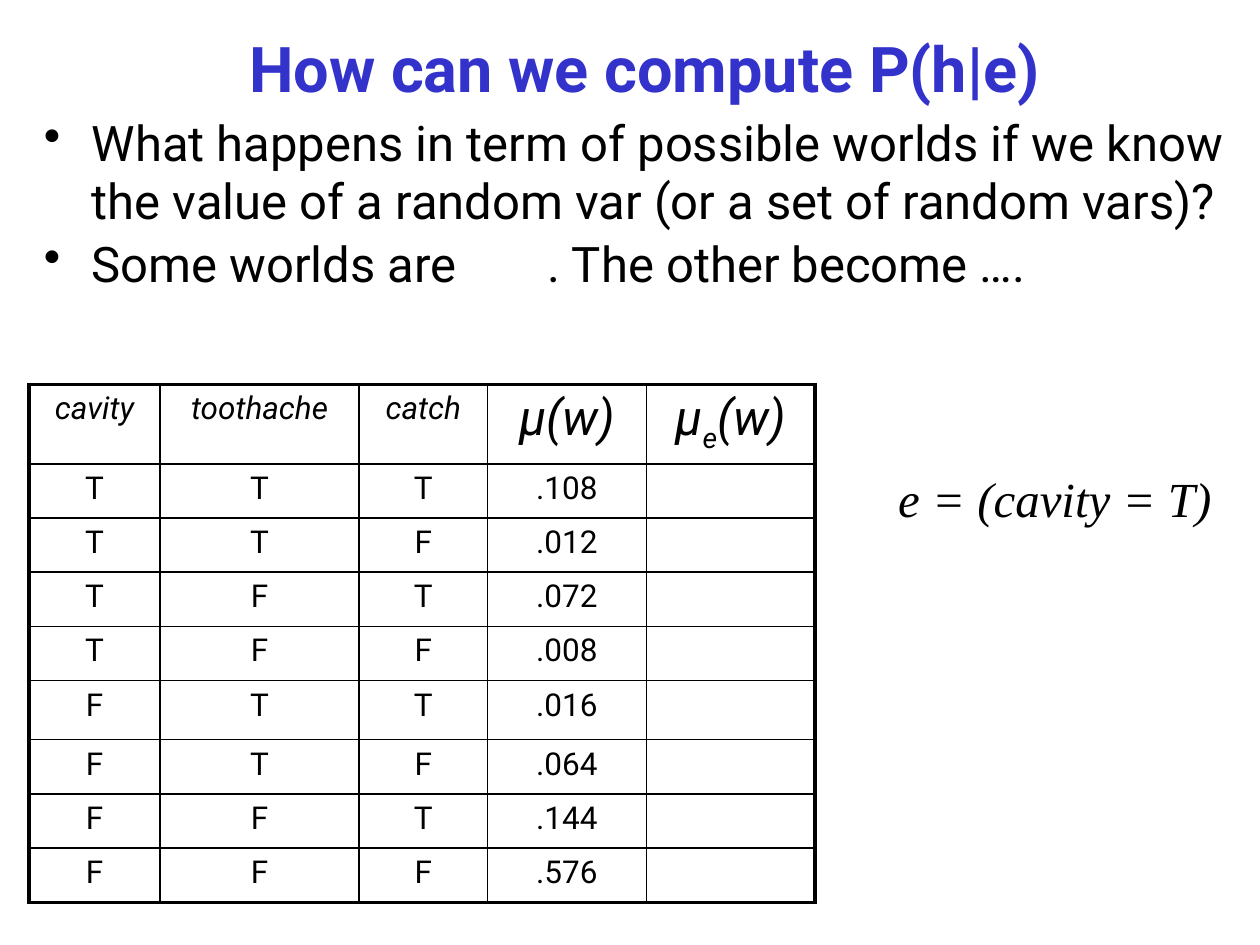
from dataclasses import dataclass
from itertools import product

from lxml.etree import SubElement
from pptx import Presentation
from pptx.dml.color import RGBColor
from pptx.enum.text import MSO_ANCHOR, MSO_AUTO_SIZE, PP_ALIGN
from pptx.oxml.ns import qn
from pptx.util import Inches, Pt


@dataclass(frozen=True)
class Theme:
    ink: RGBColor = RGBColor(0x00, 0x00, 0x00)
    paper: RGBColor = RGBColor(0xFF, 0xFF, 0xFF)
    heading: RGBColor = RGBColor(0x33, 0x33, 0xCC)
    sans: str = "Roboto"
    serif: str = "Times New Roman"
    title_size: int = 36
    body_size: int = 28
    cell_size: int = 18
    thin: float = 1
    thick: float = 2.25
    spacing: float = 0.2  # space before, as a share of the type size


theme = Theme()

presentation = Presentation()
presentation.slide_width, presentation.slide_height = Inches(10), Inches(7.5)
column = presentation.slide_width / 10
row = presentation.slide_height / 7.5


def grid_box(left, top, width, height):
    """Turn grid columns and rows into slide lengths."""
    return [round(length) for length in
            (left * column, top * row, width * column, height * row)]


def set_font(paragraph, size, name=theme.sans, color=theme.ink, bold=False, italic=False):
    font = paragraph.font
    font.size, font.name, font.bold, font.italic = Pt(size), name, bold, italic
    font.color.rgb = color


slide = presentation.slides.add_slide(presentation.slide_layouts[5])

# Title
title = slide.shapes.title
title.left, title.top, title.width, title.height = grid_box(0.23, 0, 9.77, 1.07)
title.text_frame.text = "How can we compute P(h|e)"
title.text_frame.auto_size = MSO_AUTO_SIZE.NONE
title.text_frame.vertical_anchor = MSO_ANCHOR.MIDDLE
title_paragraph = title.text_frame.paragraphs[0]
title_paragraph.alignment = PP_ALIGN.CENTER
set_font(title_paragraph, theme.title_size, color=theme.heading, bold=True)

# Bullets
bullets = [
    (0.84, "What happens in term of possible worlds if we know the value of "
           "a random var (or a set of random vars)?"),
    (1.8, "Some worlds are \t\t. The other become …."),
]
for top, text in bullets:
    bullet_box = slide.shapes.add_textbox(*grid_box(0.25, top, 9.75, 1.12))
    bullet_box.text_frame.word_wrap = True
    paragraph = bullet_box.text_frame.paragraphs[0]
    paragraph.text = text
    paragraph.space_before = Pt(theme.body_size * theme.spacing)
    set_font(paragraph, theme.body_size)
    properties = paragraph._p.get_or_add_pPr()
    indent = round(0.38 * column)
    properties.set("marL", str(indent))
    properties.set("indent", str(-indent))
    bullet = properties.makeelement(qn("a:buChar"), {"char": "•"})
    properties.find(qn("a:spcBef")).addnext(bullet)

# Table of possible worlds: every truth assignment with its measure
headers = ["cavity", "toothache", "catch", "µ(w)", "µe(w)"]
measures = [".108", ".012", ".072", ".008", ".016", ".064", ".144", ".576"]
worlds = [[*values, measure, ""]
          for values, measure in zip(product("TF", repeat=3), measures)]
rows = [headers, *worlds]
column_widths = [1.04, 1.58, 1.02, 1.26, 1.34]
row_heights = [0.46] + [0.43] * 4 + [0.47] + [0.43] * 3

table_frame = slide.shapes.add_table(
    len(rows), len(headers),
    *grid_box(0.23, 3.05, sum(column_widths), sum(row_heights)))
table = table_frame.table
table.first_row = table.horz_banding = False
for table_column, width in zip(table.columns, column_widths):
    table_column.width = round(width * column)
for table_row, height in zip(table.rows, row_heights):
    table_row.height = round(height * row)

last_row, last_column = len(rows) - 1, len(headers) - 1
for row_index, values in enumerate(rows):
    for column_index, value in enumerate(values):
        cell = table.cell(row_index, column_index)
        is_header = row_index == 0
        is_measure_header = is_header and column_index >= 3
        size = theme.body_size if is_measure_header else theme.cell_size
        paragraph = cell.text_frame.paragraphs[0]
        paragraph.alignment = PP_ALIGN.CENTER
        paragraph.space_before = Pt(size * theme.spacing)
        set_font(paragraph, size, italic=is_header)
        if value == "µe(w)":
            for part in ("µ", "e", "(w)"):
                run = paragraph.add_run()
                run.text = part
                if part == "e":
                    run.font._element.set("baseline", "-25000")
        elif value:
            paragraph.text = value

        cell_properties = cell._tc.get_or_add_tcPr()
        outer_edges = {
            "a:lnL": column_index == 0,
            "a:lnR": column_index == last_column,
            "a:lnT": row_index == 0,
            "a:lnB": row_index == last_row,
        }
        for tag, is_outer in outer_edges.items():
            line_width = Pt(theme.thick if is_outer else theme.thin)
            border = SubElement(cell_properties, qn(tag), w=str(line_width))
            line_fill = SubElement(border, qn("a:solidFill"))
            SubElement(line_fill, qn("a:srgbClr"), val=str(theme.ink))
        cell.fill.solid()
        cell.fill.fore_color.rgb = theme.paper

# Evidence
evidence = slide.shapes.add_textbox(*grid_box(7.03, 3.67, 2.69, 0.57))
evidence.text_frame.word_wrap = False
evidence.text_frame.auto_size = MSO_AUTO_SIZE.SHAPE_TO_FIT_TEXT
evidence_paragraph = evidence.text_frame.paragraphs[0]
evidence_paragraph.text = "e = (cavity = T)"
set_font(evidence_paragraph, theme.body_size, name=theme.serif, italic=True)

presentation.save("out.pptx")
